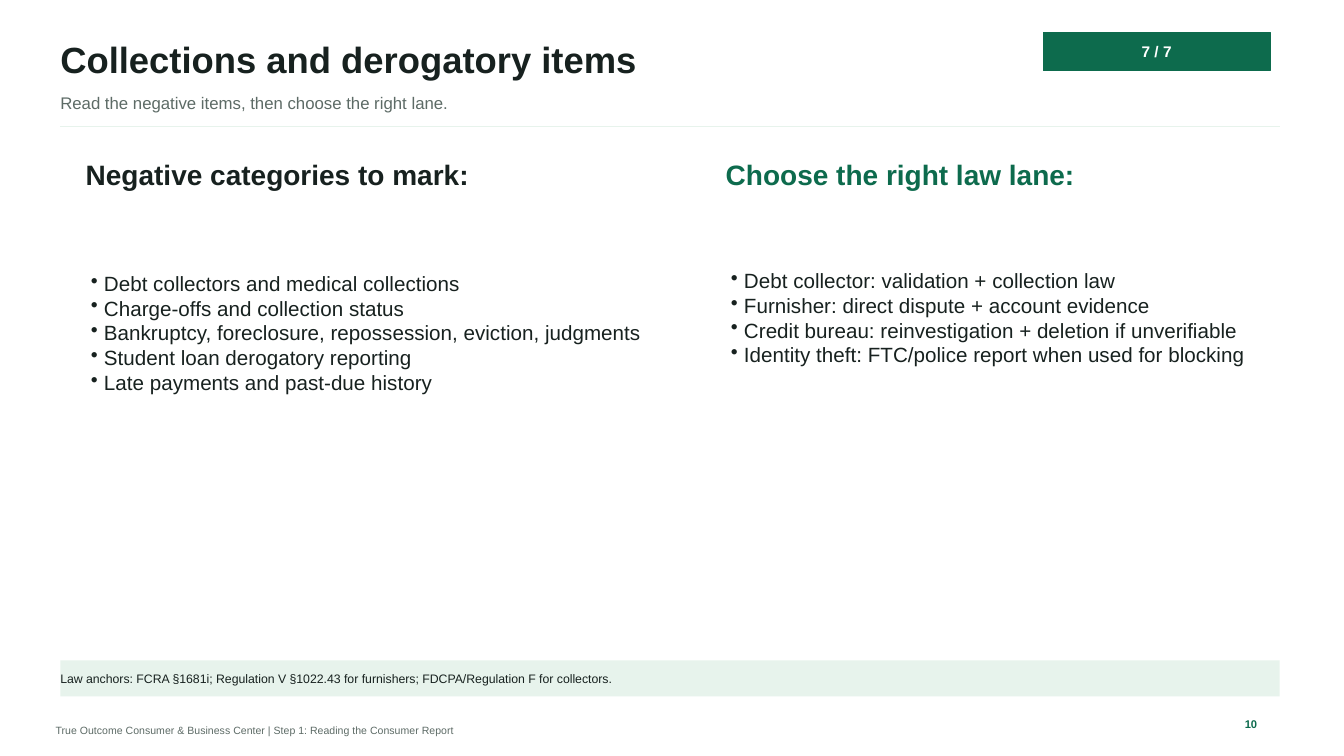
from pptx import Presentation
from pptx.dml.color import RGBColor
from pptx.enum.shapes import MSO_CONNECTOR as Conn, MSO_SHAPE as Shape
from pptx.enum.text import MSO_ANCHOR as Anchor, PP_ALIGN as Align
from pptx.oxml.ns import qn
from pptx.util import Cm, Pt
from lxml.etree import SubElement

INK = RGBColor(0x17, 0x21, 0x1F)
GREEN = RGBColor(0x0D, 0x6B, 0x4D)
GREY = RGBColor(0x5D, 0x6B, 0x66)
MINT = RGBColor(0xE7, 0xF3, 0xEC)
WHITE = RGBColor(0xFF, 0xFF, 0xFF)

TITLE = "Collections and derogatory items"
LEAD = "Read the negative items, then choose the right lane."
BADGE = "7 / 7"
COLUMNS = [
    ("Negative categories to mark:", INK, 14.48, 6.35, [
        "Debt collectors and medical collections",
        "Charge-offs and collection status",
        "Bankruptcy, foreclosure, repossession, eviction, judgments",
        "Student loan derogatory reporting",
        "Late payments and past-due history",
    ]),
    ("Choose the right law lane:", GREEN, 12.95, 5.59, [
        "Debt collector: validation + collection law",
        "Furnisher: direct dispute + account evidence",
        "Credit bureau: reinvestigation + deletion if unverifiable",
        "Identity theft: FTC/police report when used for blocking",
    ]),
]
ANCHORS = ("Law anchors: FCRA §1681i; Regulation V §1022.43 for furnishers; "
           "FDCPA/Regulation F for collectors.")
FOOTER = "True Outcome Consumer & Business Center | Step 1: Reading the Consumer Report"
NUMBER = "10"

LEFT, WIDTH = 1.52, 30.73
COL_LEFT, COL_STEP = 2.16, 16.13
INDENT = Cm(0.33)


def write(shape, lines, size, color, bold=False, align=Align.LEFT, bullet=False):
    frame = shape.text_frame
    frame.word_wrap = True
    frame.vertical_anchor = Anchor.MIDDLE
    frame.margin_left = frame.margin_right = 0
    frame.margin_top = frame.margin_bottom = 0
    frame.text = "\n".join(lines)
    for para in frame.paragraphs:
        para.alignment = align
        if bullet:
            props = para._p.get_or_add_pPr()
            props.set("marL", str(INDENT))
            props.set("indent", str(-INDENT))
            SubElement(props, qn("a:buChar")).set("char", "•")
        font = para.font
        font.name, font.size, font.bold = "Arial", Pt(size), bold
        font.color.rgb = color


def label(box, lines, size, color, **style):
    write(slide.shapes.add_textbox(*map(Cm, box)), lines, size, color, **style)


def panel(box, fill, text, size, color, **style):
    rect = slide.shapes.add_shape(Shape.RECTANGLE, *map(Cm, box))
    rect.shadow.inherit = False
    rect.fill.solid()
    rect.fill.fore_color.rgb = fill
    rect.line.fill.background()
    write(rect, [text], size, color, **style)
    return rect


deck = Presentation()
deck.slide_width, deck.slide_height = Cm(33.87), Cm(19.05)
slide = deck.slides.add_slide(deck.slide_layouts[6])

label((LEFT, 0.91, 22.61, 1.14), [TITLE], 26, INK, bold=True)
label((LEFT, 2.24, 26.67, 0.71), [LEAD], 12, GREY)

rule = slide.shapes.add_connector(
    Conn.STRAIGHT, Cm(LEFT), Cm(3.18), Cm(LEFT + WIDTH), Cm(3.18))
rule.line.color.rgb = MINT
rule.line.width = Pt(1)
SubElement(rule._element.spPr, qn("a:effectLst"))

badge = panel((26.29, 0.81, 5.72, 0.97), GREEN, BADGE, 11, WHITE,
              bold=True, align=Align.CENTER)
badge.line.color.rgb = GREEN
badge.line.width = Pt(0.75)

for i, (head, color, width, height, items) in enumerate(COLUMNS):
    x = COL_LEFT + i * COL_STEP
    label((x, 3.94, 12.19, 0.89), [head], 20, color, bold=True)
    label((x + 0.13, 5.21, width, height), items, 14.7, INK, bullet=True)

panel((LEFT, 16.64, WIDTH, 0.91), MINT, ANCHORS, 8.8, INK)
label((1.4, 18.16, 24.13, 0.51), [FOOTER], 7.5, GREY)
label((31.37, 17.98, 1.02, 0.51), [NUMBER], 8, GREEN, bold=True)

deck.save("out.pptx")
